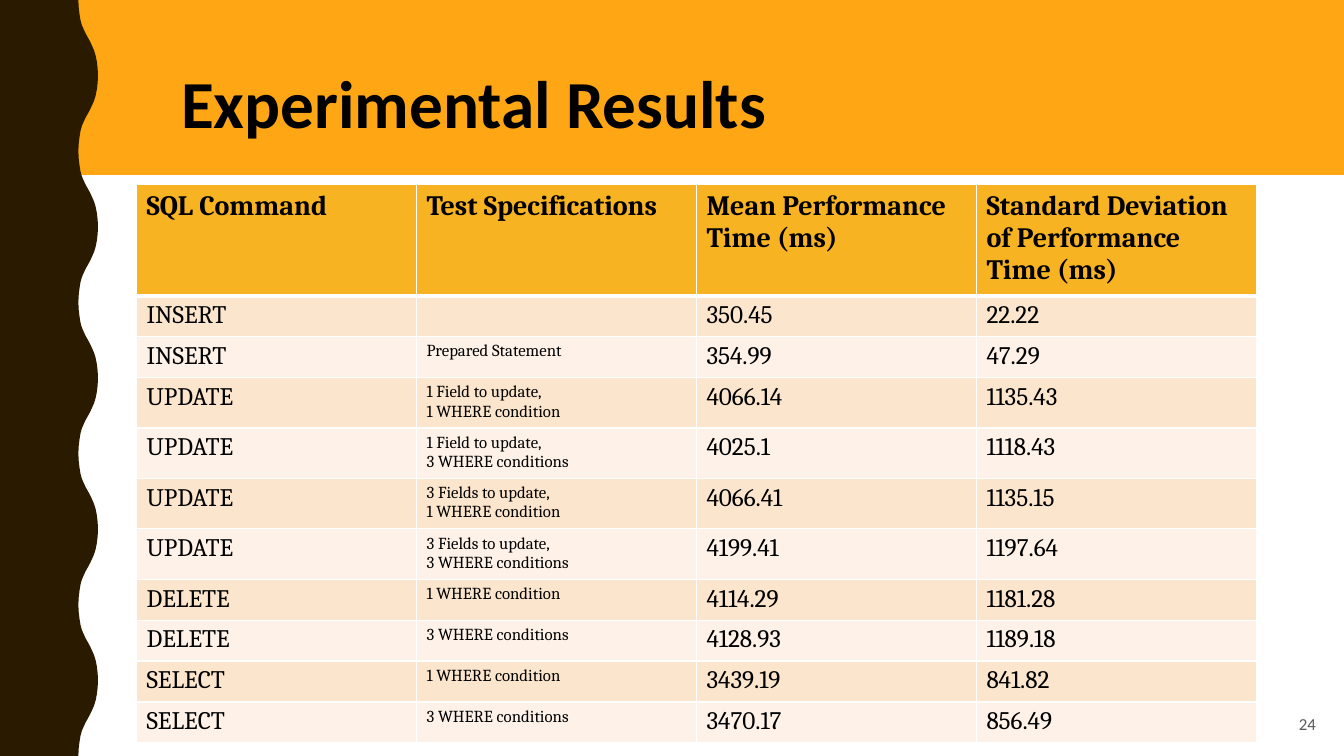
from lxml.etree import SubElement
from pptx import Presentation
from pptx.dml.color import RGBColor
from pptx.enum.shapes import MSO_SHAPE
from pptx.enum.text import MSO_ANCHOR, PP_ALIGN
from pptx.oxml.ns import qn
from pptx.util import Pt

ORANGE = RGBColor(0xFF, 0xA6, 0x15)
BROWN = RGBColor(0x2A, 0x1A, 0x00)
BLACK = RGBColor(0x00, 0x00, 0x00)
GREY = RGBColor(0x59, 0x59, 0x59)
WHITE = RGBColor(0xFF, 0xFF, 0xFF)
GOLD = RGBColor(0xF8, 0xB3, 0x23)
PEACH = RGBColor(0xFC, 0xE5, 0xCD)
CREAM = RGBColor(0xFE, 0xF2, 0xE8)

TITLE = {"name": "Calibri", "size": Pt(48), "bold": True}
PAGE_NUMBER = {"name": "Calibri", "size": Pt(12), "bold": False}
HEADING = {"name": "Cambria", "size": Pt(20), "bold": True}
VALUE = {"name": "Cambria", "size": Pt(18), "bold": False}
DETAIL = {"name": "Cambria", "size": Pt(12), "bold": False}

WAVE_PERIOD = 108
WAVE_COUNT = 5
HALF_WAVE = [
    (56, 0), (56.2, 5), (56.8, 10), (57.5, 14.4), (58.5, 18),
    (59.8, 21), (61.2, 24), (62.9, 27), (64.5, 30), (65.9, 33),
    (67.2, 36), (68.3, 39.6), (69.2, 44), (69.8, 49), (70, 54),
]

HEADINGS = (
    "SQL Command",
    "Test Specifications",
    "Mean Performance Time (ms)",
    "Standard Deviation of Performance Time (ms)",
)
RESULTS = [
    ("INSERT", "", "350.45", "22.22"),
    ("INSERT", "Prepared Statement", "354.99", "47.29"),
    ("UPDATE", "1 Field to update,\n1 WHERE condition", "4066.14", "1135.43"),
    ("UPDATE", "1 Field to update,\n3 WHERE conditions", "4025.1", "1118.43"),
    ("UPDATE", "3 Fields to update,\n1 WHERE condition", "4066.41", "1135.15"),
    ("UPDATE", "3 Fields to update,\n3 WHERE conditions", "4199.41", "1197.64"),
    ("DELETE", "1 WHERE condition", "4114.29", "1181.28"),
    ("DELETE", "3 WHERE conditions", "4128.93", "1189.18"),
    ("SELECT", "1 WHERE condition", "3439.19", "841.82"),
    ("SELECT", "3 WHERE conditions", "3470.17", "856.49"),
]


def paint(shape, color):
    """Give a shape a flat fill without line or shadow."""
    shape.shadow.inherit = False
    shape.fill.solid()
    shape.fill.fore_color.rgb = color
    shape.line.fill.background()


def write(frame, text, style, color=BLACK, align=PP_ALIGN.LEFT):
    """Write each line of text as a formatted paragraph."""
    for index, line in enumerate(text.split("\n")):
        para = frame.add_paragraph() if index else frame.paragraphs[0]
        para.alignment = align
        target = para.font
        if line:
            span = para.add_run()
            span.text = line
            target = span.font
        for name, value in style.items():
            setattr(target, name, value)
        target.color.rgb = color


def add_text(page, place, text, style, color, align):
    """Add a vertically centred text box."""
    box = page.shapes.add_textbox(*map(Pt, place))
    frame = box.text_frame
    frame.word_wrap = True
    frame.vertical_anchor = MSO_ANCHOR.MIDDLE
    write(frame, text, style, color, align)


def add_banner(page, width, height):
    """Add the band behind the title."""
    banner = page.shapes.add_shape(MSO_SHAPE.RECTANGLE, 0, 0, width, height)
    paint(banner, ORANGE)


def add_wavy_edge(page, height):
    """Add the dark left margin with its repeating wave."""
    falling = [(x, WAVE_PERIOD - y) for x, y in reversed(HALF_WAVE[1:-1])]
    points = [
        (Pt(x), Pt(y + wave * WAVE_PERIOD))
        for wave in range(WAVE_COUNT)
        for x, y in HALF_WAVE + falling
    ]
    points += [(Pt(HALF_WAVE[0][0]), height), (0, height)]
    builder = page.shapes.build_freeform(0, 0)
    builder.add_line_segments(points, close=True)
    paint(builder.convert_to_shape(), BROWN)


def add_borders(cell, bottom):
    """Draw white borders, with the given width at the bottom."""
    properties = cell._tc.get_or_add_tcPr()
    widths = {"a:lnL": 1, "a:lnR": 1, "a:lnT": 1, "a:lnB": bottom}
    for tag, width in widths.items():
        line = SubElement(properties, qn(tag), w=str(Pt(width)))
        fill = SubElement(line, qn("a:solidFill"))
        SubElement(fill, qn("a:srgbClr"), val=str(WHITE))


def fill_cell(cell, text, style, color, bottom=1):
    """Set the borders, fill and text of a table cell."""
    add_borders(cell, bottom)
    cell.fill.solid()
    cell.fill.fore_color.rgb = color
    write(cell.text_frame, text, style)


def add_results(page):
    """Add the table of measured times."""
    heights = [78.6] + [36 if "\n" in row[1] else 29.2 for row in RESULTS]
    frame = page.shapes.add_table(
        len(heights), len(HEADINGS), Pt(97.5), Pt(132), Pt(800), Pt(sum(heights))
    )
    table = frame.table
    for row, height in zip(table.rows, heights):
        row.height = Pt(height)
    for column, heading in enumerate(HEADINGS):
        fill_cell(table.cell(0, column), heading, HEADING, GOLD, bottom=3)
    for number, result in enumerate(RESULTS, start=1):
        color = PEACH if number % 2 else CREAM
        for column, text in enumerate(result):
            style = DETAIL if column == 1 and text else VALUE
            fill_cell(table.cell(number, column), text, style, color)


def main():
    """Build and save the slide."""
    deck = Presentation()
    deck.slide_width, deck.slide_height = Pt(960), Pt(540)
    page = deck.slides.add_slide(deck.slide_layouts[6])
    add_banner(page, deck.slide_width, Pt(125))
    add_wavy_edge(page, deck.slide_height)
    add_text(page, (122.4, 39.6, 775.4, 65.5), "Experimental Results",
             TITLE, BLACK, PP_ALIGN.LEFT)
    add_text(page, (725, 503, 222, 27.4), "24",
             PAGE_NUMBER, GREY, PP_ALIGN.RIGHT)
    add_results(page)
    deck.save("out.pptx")


if __name__ == "__main__":
    main()
